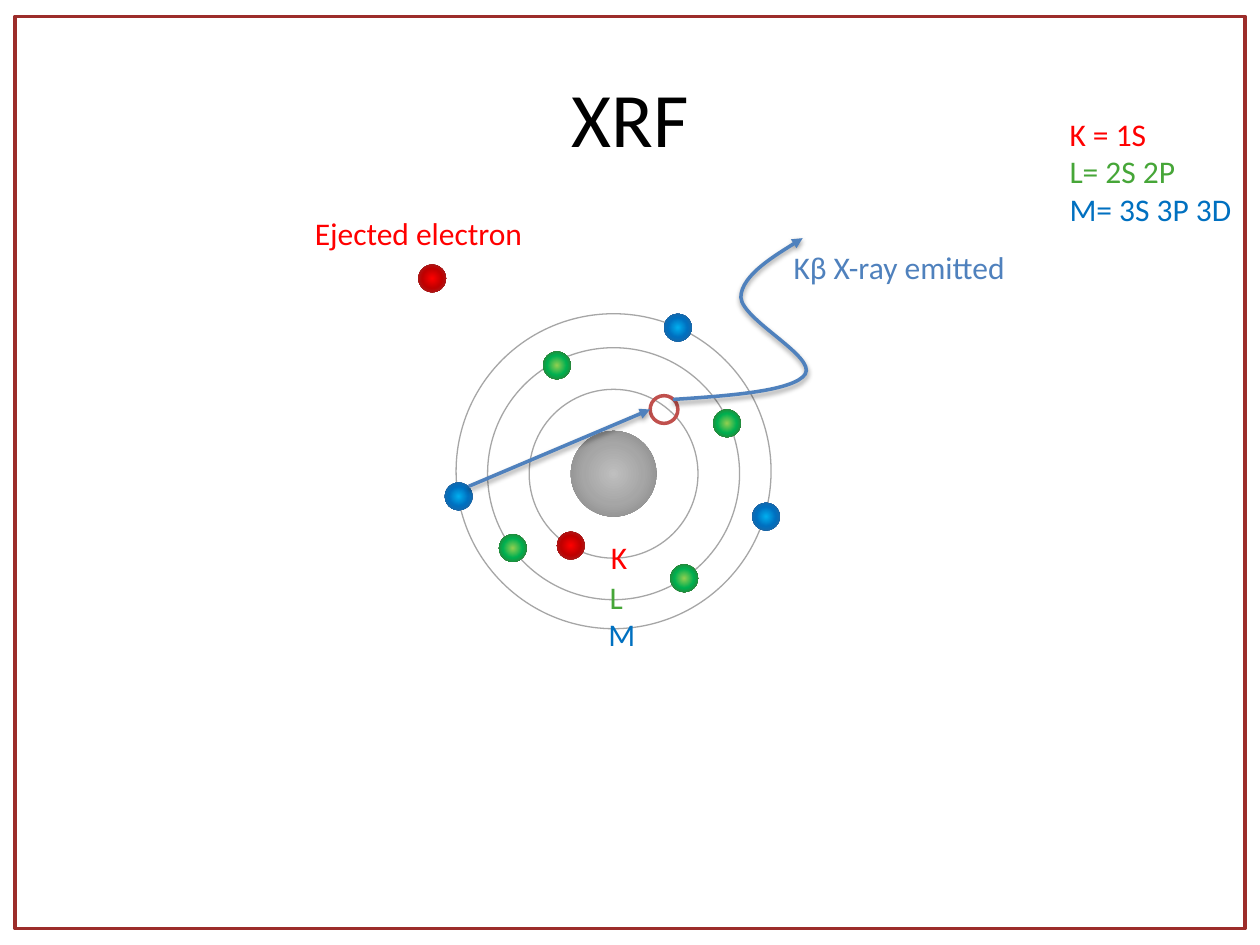
from dataclasses import dataclass

from pptx import Presentation, oxml
from pptx import util as u
from pptx.dml import color
from pptx.enum import shapes, text
from pptx.oxml import ns


@dataclass(frozen=True)
class Theme:
    font: str = "Calibri"
    title_size: int = 44
    body_size: int = 18
    thin: float = 0.75
    thick: float = 2
    black: str = "000000"
    red: str = "FF0000"
    green: str = "46A638"
    blue: str = "0070C0"
    ray: str = "4F81BD"
    ring: str = "A6A6A6"
    vacancy: str = "C0504D"
    border: str = "9C2D2A"
    # Radial gradients, from the centre outwards
    nucleus_fill: tuple[str, ...] = ("BFBFBF", "A6A6A6", "808080")
    k_fill: tuple[str, ...] = ("FF0000", "C00000", "953735")
    l_fill: tuple[str, ...] = ("92D050", "00B050", "4F6228")
    m_fill: tuple[str, ...] = ("00B0F0", "0070C0", "376092")


@dataclass(frozen=True)
class Ball:
    x: float
    y: float
    size: float
    colours: tuple[str, ...]


@dataclass(frozen=True)
class Ring:
    x: float
    y: float
    size: float
    colour: str
    weight: float


@dataclass(frozen=True)
class Label:
    left: float
    top: float
    width: float
    height: float
    lines: tuple[tuple[str, str], ...]


THEME = Theme()
ELECTRON = 0.22
CENTRE_X, CENTRE_Y = 4.87, 3.76

RINGS = (
    Ring(CENTRE_X, CENTRE_Y, 1.34, THEME.ring, THEME.thin),
    Ring(CENTRE_X, CENTRE_Y, 2, THEME.ring, THEME.thin),
    Ring(CENTRE_X, 3.74, 2.5, THEME.ring, THEME.thin),
    Ring(5.27, 3.25, ELECTRON, THEME.vacancy, THEME.thick),
)
# Electron centres, shell by shell; the second K electron is the ejected one
SHELLS = (
    (THEME.k_fill, ((4.53, 4.33), (3.43, 2.21))),
    (THEME.l_fill, ((5.43, 4.59), (5.77, 3.36), (4.42, 2.9), (4.07, 4.35))),
    (THEME.m_fill, ((5.38, 2.6), (6.08, 4.1), (3.64, 3.94))),
)
LABELS = (
    Label(2.4, 1.65, 1.87, 0.4, (("Ejected electron", THEME.red),)),
    Label(4.75, 4.22, 0.33, 0.4, (("K", THEME.red),)),
    Label(4.74, 4.54, 0.31, 0.4, (("L", THEME.green),)),
    Label(4.73, 4.83, 0.42, 0.4, (("M", THEME.blue),)),
    Label(6.2, 1.92, 1.91, 0.4, (("Kβ X-ray emitted", THEME.ray),)),
    Label(8.39, 0.86, 1.5, 1.01, (
        ("K = 1S", THEME.red),
        ("L= 2S 2P", THEME.green),
        ("M= 3S 3P 3D", THEME.blue),
    )),
)
# X-ray path in hundredths of an inch: start, then two controls and an end
RAY_START = (534, 317)
RAY_CURVES = (
    ((582, 314), (630, 310), (639, 297)),
    ((648, 283), (589, 254), (588, 236)),
    ((588, 218), (637, 189), (637, 189)),
)


def rgb(value: str) -> color.RGBColor:
    return color.RGBColor.from_string(value)


def add_span(para, words: str, size: float, colour: str) -> None:
    span = para.add_run()
    span.text = words
    span.font.name = THEME.font
    span.font.size = u.Pt(size)
    span.font.color.rgb = rgb(colour)


def add_outline(page, kind, left: float, top: float, width: float, height: float,
                colour: str, weight: float) -> None:
    shape = page.shapes.add_shape(kind, *map(u.Inches, (left, top, width, height)))
    shape.shadow.inherit = False
    shape.fill.background()
    shape.line.color.rgb = rgb(colour)
    shape.line.width = u.Pt(weight)


def draw_ring(page, ring: Ring) -> None:
    add_outline(page, shapes.MSO_SHAPE.OVAL, ring.x - ring.size / 2,
                ring.y - ring.size / 2, ring.size, ring.size, ring.colour, ring.weight)


def draw_ball(page, ball: Ball) -> None:
    left, top = ball.x - ball.size / 2, ball.y - ball.size / 2
    shape = page.shapes.add_shape(shapes.MSO_SHAPE.OVAL,
                                  *map(u.Inches, (left, top, ball.size, ball.size)))
    shape.shadow.inherit = False
    shape.line.fill.background()
    shape.fill.background()
    stops = "".join(f'<a:gs pos="{i * 50000}"><a:srgbClr val="{colour}"/></a:gs>'
                    for i, colour in enumerate(ball.colours))
    gradient = oxml.parse_xml(
        f'<a:gradFill {ns.nsdecls("a")}><a:gsLst>{stops}</a:gsLst><a:path path="circle">'
        '<a:fillToRect l="50000" t="50000" r="50000" b="50000"/></a:path></a:gradFill>')
    properties = shape.element.spPr
    properties.replace(properties.find(ns.qn("a:noFill")), gradient)


def draw_label(page, label: Label) -> None:
    box = page.shapes.add_textbox(
        *map(u.Inches, (label.left, label.top, label.width, label.height)))
    frame = box.text_frame
    frame.word_wrap = False
    frame.auto_size = text.MSO_AUTO_SIZE.SHAPE_TO_FIT_TEXT
    for i, (words, colour) in enumerate(label.lines):
        para = frame.add_paragraph() if i else frame.paragraphs[0]
        add_span(para, words, THEME.body_size, colour)


def style_arrow(arrow) -> None:
    """Give a line its colour, arrowhead and soft shadow."""
    arrow.line.color.rgb = rgb(THEME.ray)
    arrow.line.width = u.Pt(THEME.thick)
    properties = arrow.element.spPr
    properties.find(ns.qn("a:ln")).append(
        oxml.parse_xml(f'<a:tailEnd {ns.nsdecls("a")} type="triangle"/>'))
    properties.append(oxml.parse_xml(
        f'<a:effectLst {ns.nsdecls("a")}><a:outerShdw blurRad="{u.Pt(3.1)}" '
        f'dist="{u.Pt(1.6)}" dir="5400000" rotWithShape="0"><a:srgbClr val="{THEME.black}">'
        '<a:alpha val="38000"/></a:srgbClr></a:outerShdw></a:effectLst>'))


def draw_ray(page) -> None:
    ends = [curve[-1] for curve in RAY_CURVES]
    builder = page.shapes.build_freeform(*RAY_START, scale=u.Inches(0.01))
    builder.add_line_segments(ends, close=False)
    ray = builder.convert_to_shape()
    ray.fill.background()
    # Turn each straight segment into a Bézier curve
    left, top = (min(values) for values in zip(RAY_START, *ends))
    segments = list(ray.element.iter(ns.qn("a:lnTo")))
    for segment, curve in zip(segments, RAY_CURVES):
        points = "".join(f'<a:pt x="{x - left}" y="{y - top}"/>' for x, y in curve)
        segment.getparent().replace(segment, oxml.parse_xml(
            f'<a:cubicBezTo {ns.nsdecls("a")}>{points}</a:cubicBezTo>'))
    style_arrow(ray)


def main() -> None:
    deck = Presentation()
    deck.slide_width, deck.slide_height = u.Inches(10), u.Inches(7.5)
    page = deck.slides.add_slide(deck.slide_layouts[5])

    # Title
    title = page.shapes.title
    title.left, title.top, title.width, title.height = map(u.Inches, (0.5, 0.3, 9, 1.25))
    title.text_frame.vertical_anchor = text.MSO_ANCHOR.MIDDLE
    para = title.text_frame.paragraphs[0]
    para.alignment = text.PP_ALIGN.CENTER
    add_span(para, "XRF", THEME.title_size, THEME.black)

    # Atom: nucleus, shells with the vacancy, electrons
    draw_ball(page, Ball(CENTRE_X, CENTRE_Y, 0.68, THEME.nucleus_fill))
    for ring in RINGS:
        draw_ring(page, ring)
    for colours, centres in SHELLS:
        for x, y in centres:
            draw_ball(page, Ball(x, y, ELECTRON, colours))

    # Electron dropping into the vacancy, and the emitted X-ray
    drop = page.shapes.add_connector(shapes.MSO_CONNECTOR.STRAIGHT,
                                     *map(u.Inches, (3.72, 3.86, 5.16, 3.25)))
    style_arrow(drop)
    draw_ray(page)

    # Labels and slide border
    for label in LABELS:
        draw_label(page, label)
    add_outline(page, shapes.MSO_SHAPE.RECTANGLE, 0.12, 0.13, 9.76, 7.24,
                THEME.border, THEME.thick)

    deck.save("out.pptx")


if __name__ == "__main__":
    main()
